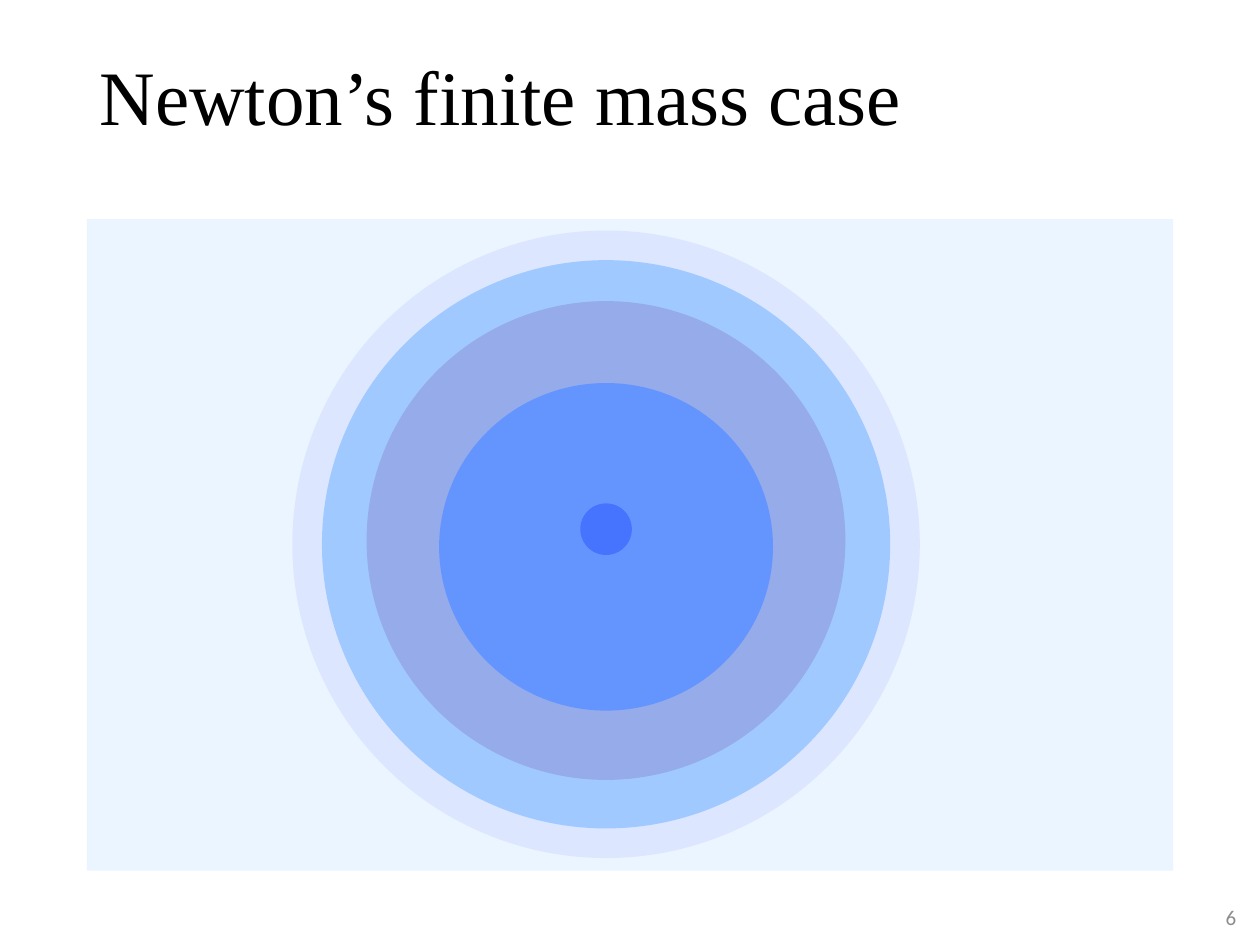
from dataclasses import dataclass

from pptx import Presentation
from pptx.dml.color import RGBColor
from pptx.enum.shapes import MSO_SHAPE
from pptx.enum.text import MSO_ANCHOR, MSO_AUTO_SIZE, PP_ALIGN
from pptx.util import Inches, Pt

SLIDE_WIDTH, SLIDE_HEIGHT = Inches(10), Inches(7.5)
COLUMNS, ROWS = 100, 75
MARGIN = 6.9
CONTENT_WIDTH = COLUMNS - 2 * MARGIN
CENTER_COLUMN = 48.1

COLORS = {
    "title": "000000",
    "number": "8C8C8C",
    "panel": "EBF5FF",
    "halo": "DCE6FF",
    "outer": "A0C9FF",
    "middle": "95ABEA",
    "inner": "6495FF",
    "core": "4674FF",
}


@dataclass(frozen=True)
class Area:
    column: float
    row: float
    columns: float
    rows: float

    def box(self) -> tuple[int, int, int, int]:
        return (
            int(SLIDE_WIDTH * self.column / COLUMNS),
            int(SLIDE_HEIGHT * self.row / ROWS),
            int(SLIDE_WIDTH * self.columns / COLUMNS),
            int(SLIDE_HEIGHT * self.rows / ROWS),
        )


@dataclass(frozen=True)
class Disc:
    color: str
    center_row: float
    columns: float
    rows: float

    def area(self) -> Area:
        return Area(
            CENTER_COLUMN - self.columns / 2,
            self.center_row - self.rows / 2,
            self.columns,
            self.rows,
        )


DISCS = [
    Disc("halo", 43.2, 49.8, 49.8),
    Disc("outer", 43.2, 45.1, 45.1),
    Disc("middle", 42.9, 38, 38),
    Disc("inner", 43.4, 26.5, 26),
    Disc("core", 42, 4.1, 4.1),
]


def write_text(shape, text: str, *, font: str, size: float, color: str,
               align=PP_ALIGN.LEFT, line_spacing: float = 1.0) -> None:
    frame = shape.text_frame
    frame.word_wrap = True
    frame.auto_size = MSO_AUTO_SIZE.NONE
    frame.vertical_anchor = MSO_ANCHOR.MIDDLE
    paragraph = frame.paragraphs[0]
    paragraph.alignment = align
    paragraph.line_spacing = line_spacing
    run = paragraph.add_run()
    run.text = text
    run.font.name = font
    run.font.size = Pt(size)
    run.font.color.rgb = RGBColor.from_string(COLORS[color])


def draw_shape(slide, kind: MSO_SHAPE, area: Area, color: str) -> None:
    shape = slide.shapes.add_shape(kind, *area.box())
    shape.shadow.inherit = False
    shape.fill.solid()
    shape.fill.fore_color.rgb = RGBColor.from_string(COLORS[color])
    shape.line.fill.background()


def main() -> None:
    presentation = Presentation()
    presentation.slide_width = SLIDE_WIDTH
    presentation.slide_height = SLIDE_HEIGHT
    slide = presentation.slides.add_slide(presentation.slide_layouts[5])

    title = slide.shapes.title
    title.left, title.top, title.width, title.height = Area(
        MARGIN, 4, CONTENT_WIDTH, 8).box()
    write_text(title, "Newton’s finite mass case", font="Times New Roman",
               size=44, color="title", line_spacing=0.9)

    number = slide.shapes.add_textbox(*Area(95.3, 70.8, 3.8, 4).box())
    write_text(number, "6", font="Calibri", size=12, color="number",
               align=PP_ALIGN.RIGHT)

    panel = Area(MARGIN, 17.4, CONTENT_WIDTH, 51.7)
    draw_shape(slide, MSO_SHAPE.RECTANGLE, panel, "panel")
    for disc in DISCS:
        draw_shape(slide, MSO_SHAPE.OVAL, disc.area(), disc.color)

    presentation.save("out.pptx")


if __name__ == "__main__":
    main()
